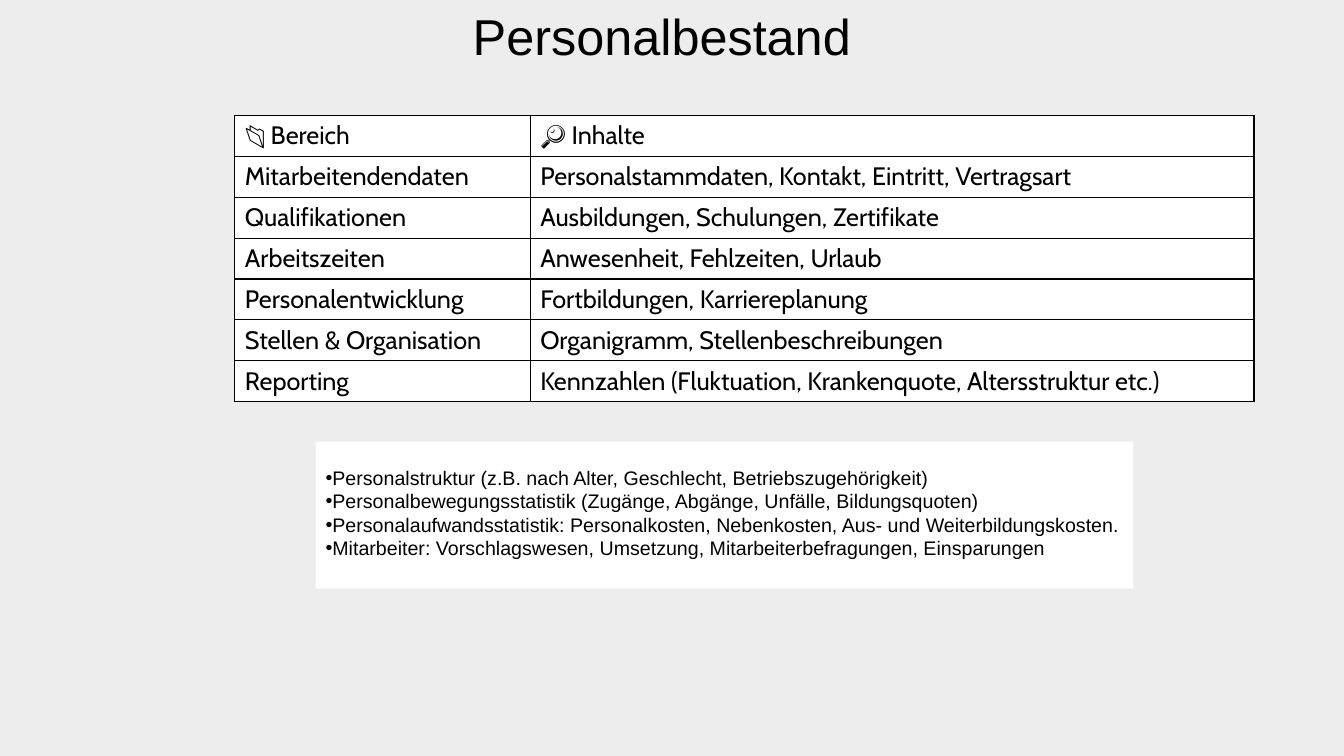
from dataclasses import dataclass

from lxml.etree import SubElement
from pptx import Presentation
from pptx.dml.color import RGBColor
from pptx.enum.shapes import MSO_SHAPE
from pptx.enum.text import MSO_ANCHOR, MSO_AUTO_SIZE, PP_ALIGN
from pptx.oxml.ns import qn
from pptx.util import Pt

COLORS = {"back": "EDEDED", "panel": "FFFFFF", "ink": "000000"}


@dataclass
class Box:
    left: float
    top: float
    width: float
    height: float

    def spans(self) -> list:
        return [Pt(v) for v in (self.left, self.top, self.width, self.height)]


@dataclass
class Style:
    font: str
    size: float


@dataclass
class Entry:
    area: str
    content: str


TITLE = Style("Arial", 36)
CELL = Style("Cabin", 18)
POINT = Style("Arial", 14)

WIDTHS = (211, 517)
ROW = 28.85
ENTRIES = [
    Entry("📂 Bereich", "🔎 Inhalte"),
    Entry("Mitarbeitendendaten", "Personalstammdaten, Kontakt, Eintritt, Vertragsart"),
    Entry("Qualifikationen", "Ausbildungen, Schulungen, Zertifikate"),
    Entry("Arbeitszeiten", "Anwesenheit, Fehlzeiten, Urlaub"),
    Entry("Personalentwicklung", "Fortbildungen, Karriereplanung"),
    Entry("Stellen & Organisation", "Organigramm, Stellenbeschreibungen"),
    Entry("Reporting", "Kennzahlen (Fluktuation, Krankenquote, Altersstruktur etc.)"),
]
POINTS = [
    "Personalstruktur (z.B. nach Alter, Geschlecht, Betriebszugehörigkeit)",
    "Personalbewegungsstatistik (Zugänge, Abgänge, Unfälle, Bildungsquoten)",
    "Personalaufwandsstatistik: Personalkosten, Nebenkosten, Aus- und Weiterbildungskosten.",
    "Mitarbeiter: Vorschlagswesen, Umsetzung, Mitarbeiterbefragungen, Einsparungen",
]


def color(name: str) -> RGBColor:
    return RGBColor.from_string(COLORS[name])


def paint(fill, name: str) -> None:
    fill.solid()
    fill.fore_color.rgb = color(name)


def write(para, text: str, style: Style) -> None:
    run = para.add_run()
    run.text = text
    run.font.name = style.font
    run.font.size = Pt(style.size)
    run.font.color.rgb = color("ink")


def frame(cell) -> None:
    """Draw a thin line on all four sides of a cell, ahead of its fill."""
    props = cell._tc.get_or_add_tcPr()
    for side in ("lnL", "lnR", "lnT", "lnB"):
        line = SubElement(props, qn(f"a:{side}"), w=str(Pt(1)))
        solid = SubElement(line, qn("a:solidFill"))
        SubElement(solid, qn("a:srgbClr"), val=COLORS["ink"])


def add_title(slide, box: Box, text: str) -> None:
    title = slide.shapes.title
    title.left, title.top, title.width, title.height = box.spans()
    body = title.text_frame
    body.auto_size = MSO_AUTO_SIZE.NONE
    body.vertical_anchor = MSO_ANCHOR.MIDDLE
    para = body.paragraphs[0]
    para.alignment = PP_ALIGN.CENTER
    write(para, text, TITLE)


def add_grid(slide, left: float, top: float) -> None:
    box = Box(left, top, sum(WIDTHS), ROW * len(ENTRIES))
    grid = slide.shapes.add_table(len(ENTRIES), len(WIDTHS), *box.spans()).table
    grid.first_row = grid.horz_banding = False
    for column, width in zip(grid.columns, WIDTHS):
        column.width = Pt(width)
    for row, entry in zip(grid.rows, ENTRIES):
        row.height = Pt(ROW)
        for cell, text in zip(row.cells, (entry.area, entry.content)):
            frame(cell)
            paint(cell.fill, "panel")
            cell.vertical_anchor = MSO_ANCHOR.MIDDLE
            write(cell.text_frame.paragraphs[0], text, CELL)


def add_points(slide, box: Box) -> None:
    panel = slide.shapes.add_shape(MSO_SHAPE.RECTANGLE, *box.spans())
    panel.shadow.inherit = False
    paint(panel.fill, "panel")
    panel.line.fill.background()
    body = panel.text_frame
    body.word_wrap = False
    body.vertical_anchor = MSO_ANCHOR.MIDDLE
    body.margin_top, body.margin_bottom = Pt(0), Pt(3.6)
    for i, text in enumerate(POINTS):
        para = body.add_paragraph() if i else body.paragraphs[0]
        para.alignment = PP_ALIGN.LEFT
        props = para._p.get_or_add_pPr()
        props.set("marL", "0")
        props.set("indent", "0")
        SubElement(props, qn("a:buFont"), typeface=POINT.font)
        SubElement(props, qn("a:buChar"), char="•")
        write(para, text, POINT)


def main() -> None:
    deck = Presentation()
    deck.slide_width, deck.slide_height = Pt(960), Pt(540)
    slide = deck.slides.add_slide(deck.slide_layouts.get_by_name("Title Only"))
    paint(slide.background.fill, "back")
    add_title(slide, Box(325.5, 0, 294.5, 51), "Personalbestand")
    add_grid(slide, 167.75, 82.5)
    add_points(slide, Box(225.5, 315.5, 584, 105))
    deck.save("out.pptx")


if __name__ == "__main__":
    main()
